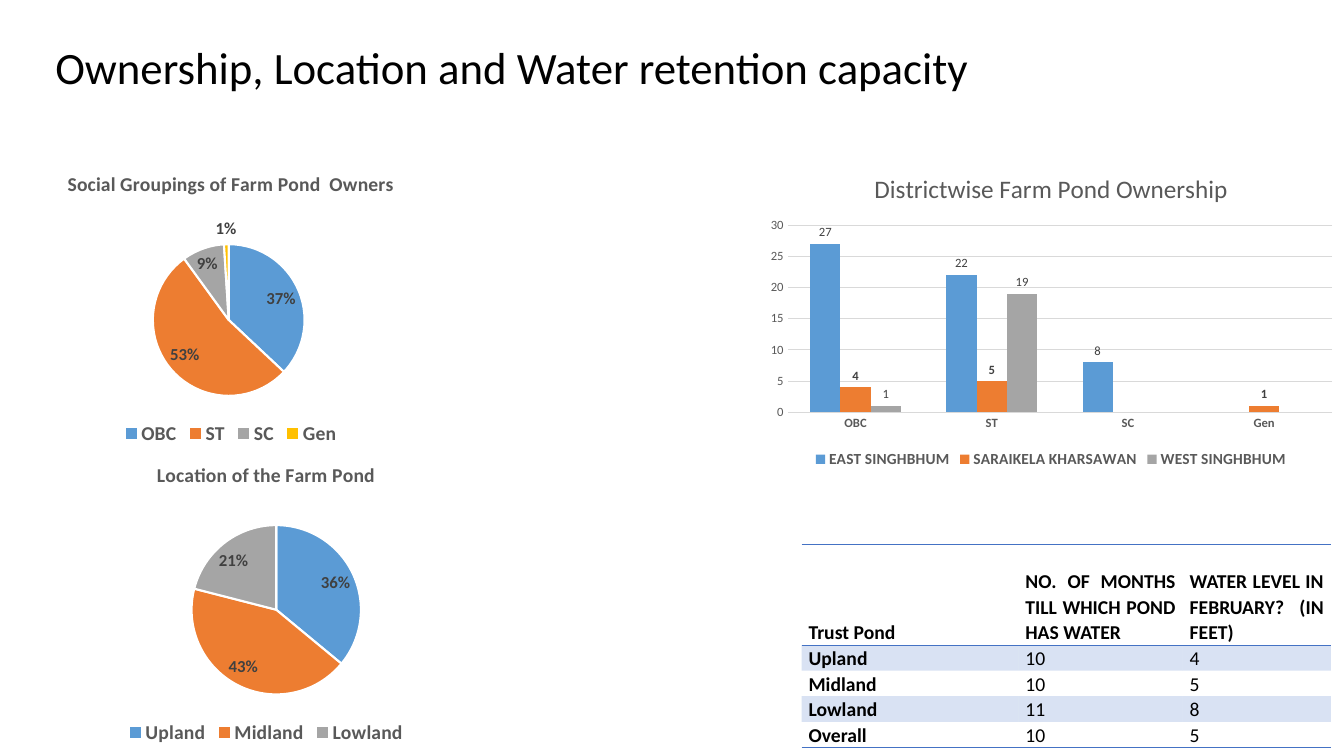
from lxml import etree
from pptx import Presentation, util as u
from pptx.chart.data import CategoryChartData
from pptx.dml.color import RGBColor
from pptx.enum import chart as ch, text
from pptx.oxml import parse_xml
from pptx.oxml.ns import nsdecls, qn

BLACK = RGBColor(0, 0, 0)
WHITE = RGBColor(255, 255, 255)
GREY = RGBColor(0x59, 0x59, 0x59)
DARK = RGBColor(0x40, 0x40, 0x40)
GRID = RGBColor(0xD9, 0xD9, 0xD9)
ACCENT = RGBColor(0x44, 0x72, 0xC4)
PALETTE = [RGBColor(0x5B, 0x9B, 0xD5), RGBColor(0xED, 0x7D, 0x31),
           RGBColor(0xA5, 0xA5, 0xA5), RGBColor(0xFF, 0xC0, 0x00)]
PLAIN_TABLE = "{2D5ABB26-0587-4C30-8999-92F81FD0307C}"


def set_font(font, size, color=BLACK, bold=False):
    font.name, font.size, font.bold = "Calibri", u.Pt(size), bold
    font.color.rgb = color


def write(frame, words, size, color=BLACK, bold=False, align=None, spacing=None):
    para = frame.paragraphs[0]
    para.alignment, para.line_spacing = align, spacing
    span = para.add_run()
    span.text = words
    set_font(span.font, size, color, bold)


class Page:
    """Holds the style and the current slide, and draws its elements."""

    def __init__(self, deck):
        self.page = deck.slides.add_slide(deck.slide_layouts[6])

    def heading(self, words, place):
        box = self.page.shapes.add_textbox(*map(u.Inches, place))
        box.text_frame.word_wrap = True
        write(box.text_frame, words, 32)

    def chart(self, kind, place, title, cats, series, plot, title_size=14,
              title_bold=True, legend_size=14):
        data = CategoryChartData()
        data.categories = cats
        for name, values in series:
            data.add_series(name, values)
        chart = self.page.shapes.add_chart(kind, *map(u.Inches, place), data).chart
        set_font(chart.font, 10)
        chart.has_title = True
        write(chart.chart_title.text_frame, title, title_size, GREY, title_bold)
        chart.has_legend = True
        chart.legend.position = ch.XL_LEGEND_POSITION.BOTTOM
        chart.legend.include_in_layout = False
        set_font(chart.legend.font, legend_size, GREY, True)
        self.place_plot(chart, plot)
        return chart

    def place_plot(self, chart, plot):
        area = chart.element.find(".//" + qn("c:plotArea"))
        for old in area.findall(qn("c:layout")):
            area.remove(old)
        sizes = "".join(f'<c:{key} val="{value}"/>' for key, value in zip("xywh", plot))
        area.insert(0, parse_xml(
            f'<c:layout {nsdecls("c")}><c:manualLayout><c:layoutTarget val="inner"/>'
            f'<c:xMode val="edge"/><c:yMode val="edge"/>{sizes}'
            '</c:manualLayout></c:layout>'))

    def pie(self, place, title, shares, plot):
        chart = self.chart(ch.XL_CHART_TYPE.PIE, place, title, list(shares),
                           [("Series 1", list(shares.values()))], plot)
        pie = chart.plots[0]
        pie.vary_by_categories = True
        for index, color in zip(range(len(shares)), PALETTE):
            wedge = pie.series[0].points[index].format
            wedge.fill.solid()
            wedge.fill.fore_color.rgb = color
            wedge.line.color.rgb = WHITE
            wedge.line.width = u.Pt(1.5)
        labels = pie.series[0].data_labels
        labels.show_percentage, labels.show_value = True, False
        labels.number_format, labels.number_format_is_linked = "0%", False
        labels.position = ch.XL_LABEL_POSITION.BEST_FIT
        set_font(labels.font, 12, DARK, True)

    def columns(self, place, title, cats, series, plot, bold_labels):
        chart = self.chart(ch.XL_CHART_TYPE.COLUMN_CLUSTERED, place, title, cats, series,
                           plot, title_size=18, title_bold=False, legend_size=11)
        bars = chart.plots[0]
        bars.vary_by_categories, bars.gap_width, bars.overlap = False, 150, 0
        for one, color in zip(bars.series, PALETTE):
            one.format.fill.solid()
            one.format.fill.fore_color.rgb = color
            labels = one.data_labels
            labels.show_value = True
            labels.position = ch.XL_LABEL_POSITION.OUTSIDE_END
            set_font(labels.font, 9, DARK, one.name == bold_labels)
        for axis, bold in ((chart.category_axis, True), (chart.value_axis, False)):
            axis.major_tick_mark = ch.XL_TICK_MARK.NONE
            axis.format.line.fill.background()
            set_font(axis.tick_labels.font, 9, GREY, bold)
        axis = chart.value_axis
        axis.minimum_scale, axis.maximum_scale, axis.major_unit = 0, 30, 5
        axis.major_gridlines.format.line.color.rgb = GRID
        axis.major_gridlines.format.line.width = u.Pt(0.75)

    def table(self, place, widths, heights, rows):
        table = self.page.shapes.add_table(len(rows), len(widths),
                                           *map(u.Inches, place)).table
        table.first_row = table.horz_banding = False
        table._tbl.tblPr.find(qn("a:tableStyleId")).text = PLAIN_TABLE
        for column, width in zip(table.columns, widths):
            column.width = u.Inches(width)
        for r, (row, height) in enumerate(zip(rows, heights)):
            table.rows[r].height = u.Inches(height)
            edges = {0: ("lnT", "lnB"), len(rows) - 1: ("lnB",)}.get(r, ())
            for c, words in enumerate(row):
                self.cell(table.cell(r, c), words, r == 0 or c == 0, r % 2 == 1, edges)

    def cell(self, cell, words, bold, shaded, edges):
        cell.margin_left = cell.margin_right = u.Inches(0.07)
        cell.margin_top = cell.margin_bottom = 0
        cell.vertical_anchor = text.MSO_ANCHOR.BOTTOM
        write(cell.text_frame, words, 14, bold=bold,
              align=text.PP_ALIGN.JUSTIFY, spacing=1.07)
        props = cell._tc.get_or_add_tcPr()
        if shaded:
            cell.fill.solid()
            cell.fill.fore_color.rgb = ACCENT
            tint = props.find(".//" + qn("a:srgbClr"))
            etree.SubElement(tint, qn("a:alpha"), val="20000")
        else:
            cell.fill.background()
        for place, edge in enumerate(edges):
            props.insert(place, parse_xml(
                f'<a:{edge} {nsdecls("a")} w="12700"><a:solidFill>'
                f'<a:srgbClr val="{ACCENT}"/></a:solidFill></a:{edge}>'))


def main():
    deck = Presentation()
    deck.slide_width, deck.slide_height = u.Inches(13.33), u.Inches(7.5)
    page = Page(deck)
    page.pie((0.14, 1.54, 4.3, 2.92), "Social Groupings of Farm Pond  Owners",
             {"OBC": 37, "ST": 53, "SC": 9, "Gen": 1}, (0.32, 0.3, 0.35, 0.52))
    page.columns((7.52, 1.54, 5.81, 3.15), "Districtwise Farm Pond Ownership",
                 ["OBC", "ST", "SC", "Gen"],
                 [("EAST SINGHBHUM", (27, 22, 8, None)),
                  ("SARAIKELA KHARSAWAN", (4, 5, None, 1)),
                  ("WEST SINGHBHUM", (1, 19, None, None))],
                 (0.05, 0.22, 0.93, 0.59), bold_labels="SARAIKELA KHARSAWAN")
    page.pie((0.14, 4.43, 5, 3), "Location of the Farm Pond",
             {"Upland": 36, "Midland": 43, "Lowland": 21}, (0.35, 0.26, 0.34, 0.56))
    page.table((7.95, 5.4, 5.25, 1.95), (2.15, 1.63, 1.47), [1] + [0.2] * 4, [
        ("Trust Pond", "NO. OF MONTHS TILL WHICH POND HAS WATER",
         "WATER LEVEL IN FEBRUARY? (IN FEET)"),
        ("Upland", "10", "4"),
        ("Midland", "10", "5"),
        ("Lowland", "11", "8"),
        ("Overall", "10", "5")])
    page.heading("Ownership, Location and Water retention capacity",
                 (0.45, 0.34, 12.14, 0.64))
    deck.save("out.pptx")


if __name__ == "__main__":
    main()
